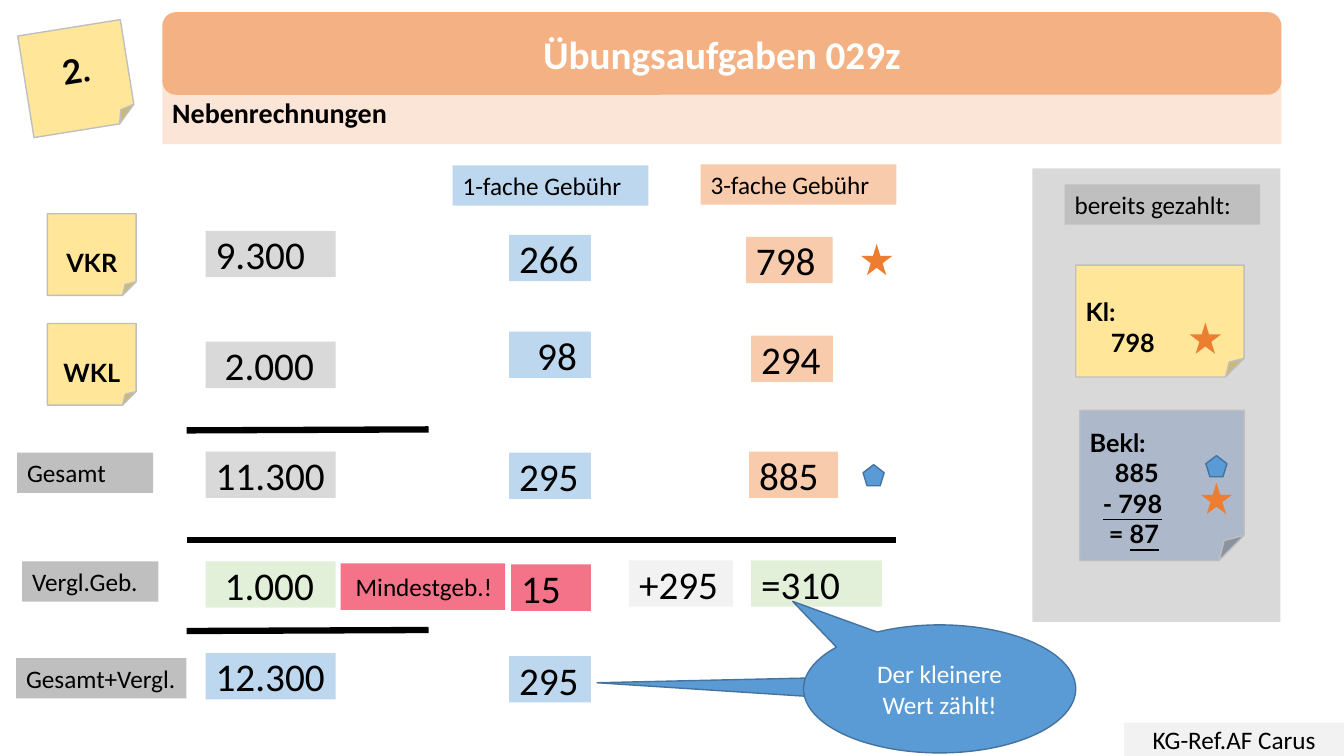
"""Build the fee calculation slide for exercise 029z."""
import dataclasses
import typing

import pptx
import pptx.dml.color
import pptx.enum.shapes
import pptx.enum.text
import pptx.oxml.ns
import pptx.util
from lxml import etree

EMU_PER_PX = 9144
SHAPE = pptx.enum.shapes.MSO_SHAPE
ALIGN = pptx.enum.text.PP_ALIGN
COLORS = {
    "black": "000000", "white": "FFFFFF", "panel": "D9D9D9", "label": "BFBFBF",
    "pale": "F2F2F2", "title": "F4B183", "subtitle": "FBE5D6", "single": "BDD7EE",
    "triple": "F8CBAD", "note": "FFE699", "defendant": "ADB9CA", "compare": "E2F0D9",
    "minimum": "F57389", "star": "ED7D31", "accent": "5B9BD5", "accent_edge": "43739E",
}


@dataclasses.dataclass(frozen=True)
class Line:
    text: str
    indent: int = 0
    underlined: str = ""


@dataclasses.dataclass(frozen=True)
class Box:
    left: int
    top: int
    width: int
    height: int
    fill: str
    lines: tuple[Line, ...] = ()
    size: int = 18
    kind: typing.Any = SHAPE.RECTANGLE
    edge: str = ""
    font: str = "Calibri"
    bold: bool = False
    color: str = "black"
    centered: bool = False
    inset_top: int = 5
    rotation: float = 0
    adjustments: tuple[float, ...] = ()


@dataclasses.dataclass(frozen=True)
class Rule:
    left: int
    start_y: int
    right: int
    end_y: int


def px(length: int) -> int:
    return pptx.util.Emu(length * EMU_PER_PX)


def rgb(name: str) -> pptx.dml.color.RGBColor:
    return pptx.dml.color.RGBColor.from_string(COLORS[name])


def write_lines(frame: typing.Any, box: Box) -> None:
    frame.word_wrap = True
    frame.vertical_anchor = pptx.enum.text.MSO_ANCHOR.MIDDLE
    frame.margin_left = frame.margin_right = px(10)
    frame.margin_top, frame.margin_bottom = px(box.inset_top), px(5)
    for index, line in enumerate(box.lines):
        paragraph = frame.add_paragraph() if index else frame.paragraphs[0]
        paragraph.text = line.text
        paragraph.alignment = ALIGN.CENTER if box.centered else ALIGN.LEFT
        if line.indent:
            paragraph._p.get_or_add_pPr().set("marL", str(px(line.indent)))
        if line.underlined:
            result = paragraph.add_run()
            result.text = line.underlined
            result.font.underline = True
        for run in paragraph.runs:
            run.font.name = box.font
            run.font.size = pptx.util.Pt(box.size)
            run.font.bold = box.bold
            run.font.color.rgb = rgb(box.color)


def draw_box(slide: typing.Any, box: Box) -> None:
    shape = slide.shapes.add_shape(
        box.kind, px(box.left), px(box.top), px(box.width), px(box.height))
    shape.shadow.inherit = False
    shape.rotation = box.rotation
    shape.fill.solid()
    shape.fill.fore_color.rgb = rgb(box.fill)
    if box.edge:
        shape.line.color.rgb = rgb(box.edge)
        shape.line.width = pptx.util.Pt(1)
    else:
        shape.line.fill.background()
    for index, value in enumerate(box.adjustments):
        shape.adjustments[index] = value
    if box.lines:
        write_lines(shape.text_frame, box)


def draw_rule(slide: typing.Any, rule: Rule) -> None:
    connector = slide.shapes.add_connector(
        pptx.enum.shapes.MSO_CONNECTOR.STRAIGHT,
        px(rule.left), px(rule.start_y), px(rule.right), px(rule.end_y))
    connector.line.color.rgb = rgb("black")
    connector.line.width = pptx.util.Pt(4.5)
    etree.SubElement(connector._element.spPr, pptx.oxml.ns.qn("a:effectLst"))


def figure(left: int, top: int, width: int, fill: str, text: str, indent: int = 0) -> Box:
    return Box(left, top, width, 46, fill, (Line(text, indent),), 28)


def amount(top: int, fill: str, text: str, indent: int = 0) -> Box:
    return figure(204, top, 129, fill, text, indent)


def single_fee(top: int, text: str, indent: int = 0) -> Box:
    return figure(505, top, 81, "single", text, indent)


def label(left: int, top: int, width: int, text: str, fill: str = "label") -> Box:
    return Box(left, top, width, 40, fill, (Line(text),))


def note(left: int, top: int, width: int, height: int, *lines: Line,
         fill: str = "note", centered: bool = False) -> Box:
    return Box(left, top, width, height, fill, lines, kind=SHAPE.FOLDED_CORNER,
               edge="label", font="Lato", bold=True, centered=centered, inset_top=35)


def star(left: int, top: int) -> Box:
    return Box(left, top, 31, 31, "star", kind=SHAPE.STAR_5_POINT)


def pentagon(left: int, top: int) -> Box:
    return Box(left, top, 21, 21, "accent", kind=SHAPE.REGULAR_PENTAGON, edge="accent_edge")


def callout(left: int, top: int, width: int, height: int,
            tip: tuple[float, float], *lines: Line) -> Box:
    return Box(left, top, width, height, "accent", lines, kind=SHAPE.OVAL_CALLOUT,
               edge="accent_edge", color="white", centered=True, adjustments=tip)


HEADER = [
    Box(1024, 167, 246, 450, "panel"),
    Box(161, 79, 1110, 64, "subtitle", (Line("Nebenrechnungen"),), 20, bold=True),
    Box(1115, 717, 218, 33, "pale", (Line("KG-Ref.AF Carus"),), centered=True),
    Box(161, 12, 1110, 82, "title", (Line("Übungsaufgaben 029z"),), 28,
        kind=SHAPE.ROUNDED_RECTANGLE, bold=True, color="white", centered=True),
    Box(25, 27, 103, 102, "note", (Line("2."),), 24, kind=SHAPE.FOLDED_CORNER,
        edge="label", font="Lato", bold=True, centered=True, rotation=350.9),
]
CALCULATION = [
    label(449, 164, 194, "1-fache Gebühr", "single"),
    label(695, 163, 194, "3-fache Gebühr", "triple"),
    note(47, 212, 88, 81, Line("VKR"), centered=True),
    amount(229, "panel", "9.300"),
    single_fee(233, "266"),
    figure(740, 235, 86, "triple", "798"),
    star(854, 242),
    note(47, 321, 88, 81, Line("WKL"), centered=True),
    amount(339, "panel", "2.000", 9),
    single_fee(329, "98", 18),
    figure(745, 333, 81, "triple", "294"),
    label(17, 449, 135, "Gesamt"),
    amount(448, "panel", "11.300"),
    single_fee(449, "295"),
    figure(743, 448, 88, "triple", "885"),
    pentagon(856, 461),
    label(22, 557, 135, "Vergl.Geb."),
    amount(557, "compare", "1.000", 9),
    Box(338, 559, 163, 46, "minimum", (Line("Mindestgeb.!", 5),)),
    figure(507, 560, 79, "minimum", "15"),
    figure(745, 556, 130, "compare", "=310"),
    label(16, 653, 169, "Gesamt+Vergl."),
    amount(648, "single", "12.300"),
    single_fee(651, "295"),
]
PAYMENTS = [
    label(1056, 183, 194, "bereits gezahlt:"),
    note(1067, 263, 167, 111, Line("Kl:"), Line("798", 25)),
    star(1180, 320),
    note(1071, 407, 163, 149, Line("Bekl:"), Line("885", 25),
         Line("", 13, "- 798"), Line("= ", 19, "87"), fill="defendant"),
    pentagon(1196, 452),
    star(1191, 479),
]
COMPARISON = [
    callout(816, 633, 232, 103, (-1.465, -0.069)),
    callout(797, 620, 270, 127, (-0.54, -0.684), Line("Der kleinere Wert zählt!")),
    figure(624, 556, 103, "pale", "+295"),
]
SUM_RULES = [Rule(185, 427, 425, 426), Rule(185, 536, 889, 536), Rule(185, 626, 425, 625)]


def main() -> None:
    presentation = pptx.Presentation()
    presentation.slide_width, presentation.slide_height = px(1333), px(750)
    slide = presentation.slides.add_slide(presentation.slide_layouts[6])
    for box in HEADER + CALCULATION:
        draw_box(slide, box)
    for rule in SUM_RULES:
        draw_rule(slide, rule)
    for box in PAYMENTS + COMPARISON:
        draw_box(slide, box)
    presentation.save("out.pptx")


if __name__ == "__main__":
    main()
